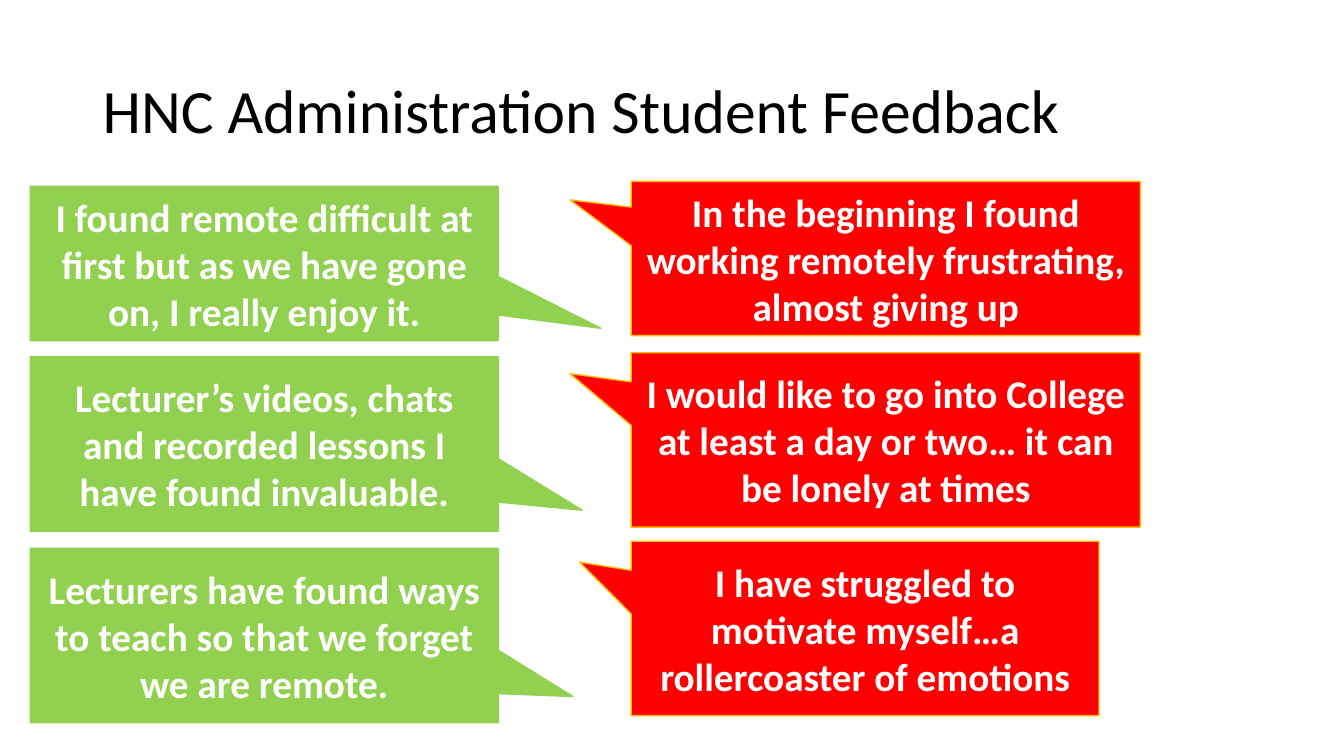
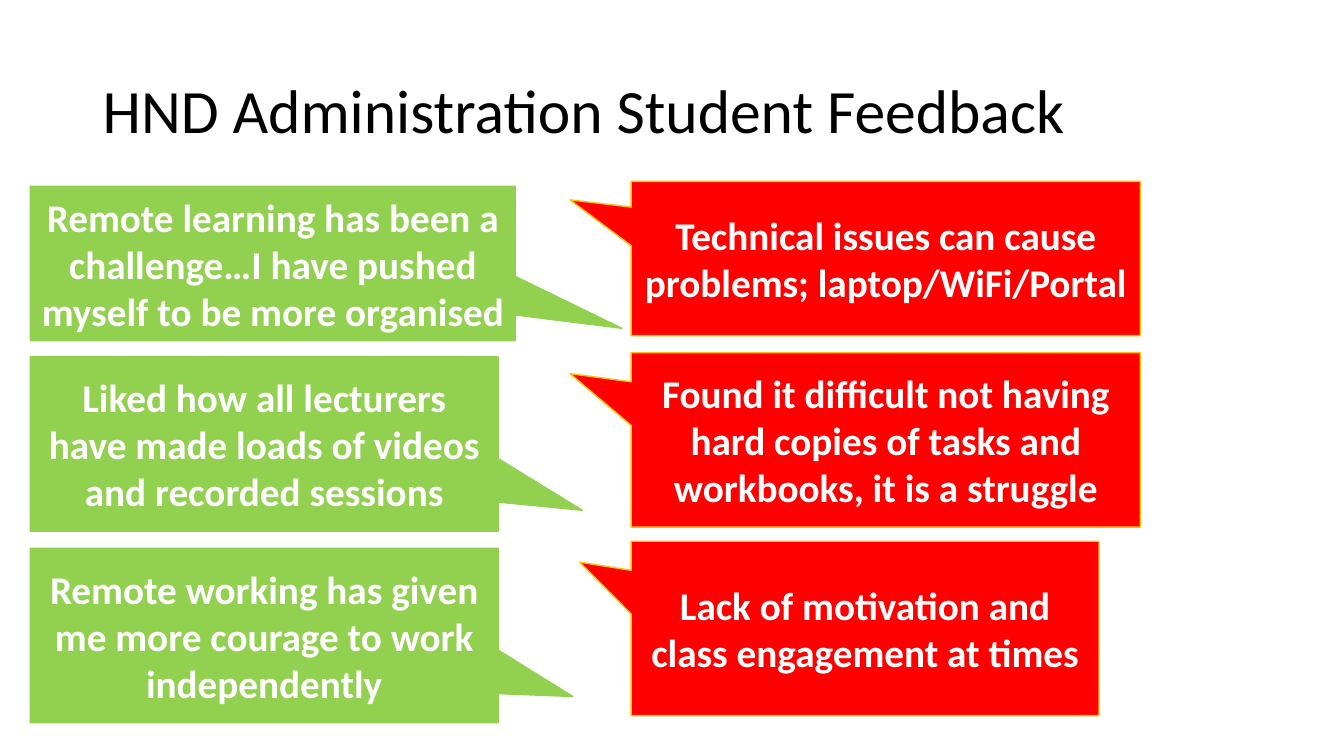
from pptx import Presentation
from pptx import util as u
from pptx.dml.color import RGBColor
from pptx.enum import shapes, text

PX = 9144  # EMU per px, 100 px to the inch
FONT = "Calibri"
BLACK = RGBColor(0x00, 0x00, 0x00)
WHITE = RGBColor(0xFF, 0xFF, 0xFF)
GREEN = RGBColor(0x92, 0xD0, 0x50)
RED = RGBColor(0xFF, 0x00, 0x00)
AMBER = RGBColor(0xFF, 0xC0, 0x00)

# Callout slots: left, top, width, height, then the tip as a share of the size
POSITIVE_SLOTS = [
    (30, 185, 464, 153, 0.72, 0.42),
    (30, 354, 464, 173, 0.68, 0.38),
    (30, 544, 464, 173, 0.66, 0.35),
]
NEGATIVE_SLOTS = [
    (626, 180, 505, 153, -0.62, -0.38),
    (626, 350, 505, 173, -0.62, -0.38),
    (626, 537, 464, 173, -0.61, -0.38),
]

# Title, positive quotes, negative quotes, widths that differ by positive row
FEEDBACK = [
    ("HNC Administration Student Feedback",
     ["I found remote difficult at first but as we have gone on, I really enjoy it.",
      "Lecturer’s videos, chats and recorded lessons I have found invaluable.",
      "Lecturers have found ways to teach so that we forget we are remote."],
     ["In the beginning I found working remotely frustrating, almost giving up",
      "I would like to go into College at least a day or two… it can be lonely at times",
      "I have struggled to motivate myself…a rollercoaster of emotions"],
     {}),
    ("HND Administration Student Feedback",
     ["Remote learning has been a challenge…I have pushed myself to be more organised",
      "Liked how all lecturers have made loads of videos and recorded sessions",
      "Remote working has given me more courage to work independently"],
     ["Technical issues can cause problems; laptop/WiFi/Portal",
      "Found it difficult not having hard copies of tasks and workbooks, it is a struggle",
      "Lack of motivation and class engagement at times"],
     {0: 481}),
]


def px(*lengths):
    return [u.Emu(length * PX) for length in lengths]


def set_text(shape, words, size, color, bold=False):
    """Fill a shape with one wrapped, vertically centred paragraph."""
    frame = shape.text_frame
    frame.word_wrap = True
    frame.vertical_anchor = text.MSO_ANCHOR.MIDDLE
    frame.text = words
    para = frame.paragraphs[0]
    font = para.runs[0].font
    font.name, font.size, font.bold = FONT, u.Pt(size), bold
    font.color.rgb = color
    return para


def add_title(page, words):
    box = page.shapes.add_textbox(*px(92, 40, 1150, 145))
    set_text(box, words, 44, BLACK).line_spacing = 0.9


def add_callout(page, slot, words, fill, line, width=None):
    left, top, usual_width, height, *tip = slot
    callout = page.shapes.add_shape(
        shapes.MSO_SHAPE.RECTANGULAR_CALLOUT,
        *px(left, top, width or usual_width, height))
    callout.shadow.inherit = False
    callout.adjustments[0], callout.adjustments[1] = tip
    callout.fill.solid()
    callout.fill.fore_color.rgb = fill
    callout.line.color.rgb = line
    callout.line.width = u.Pt(1)
    para = set_text(callout, words, 28, WHITE, bold=True)
    para.alignment = text.PP_ALIGN.CENTER


def add_feedback_page(deck, title, positives, negatives, widths):
    page = deck.slides.add_slide(deck.slide_layouts[6])
    add_title(page, title)
    # Positive quotes on the left
    for row, (slot, quote) in enumerate(zip(POSITIVE_SLOTS, positives)):
        add_callout(page, slot, quote, GREEN, GREEN, widths.get(row))
    # Negative quotes on the right
    for slot, quote in zip(NEGATIVE_SLOTS, negatives):
        add_callout(page, slot, quote, RED, AMBER)


def main():
    deck = Presentation()
    deck.slide_width, deck.slide_height = px(1333, 750)
    for feedback in FEEDBACK:
        add_feedback_page(deck, *feedback)
    deck.save("out.pptx")


if __name__ == "__main__":
    main()
